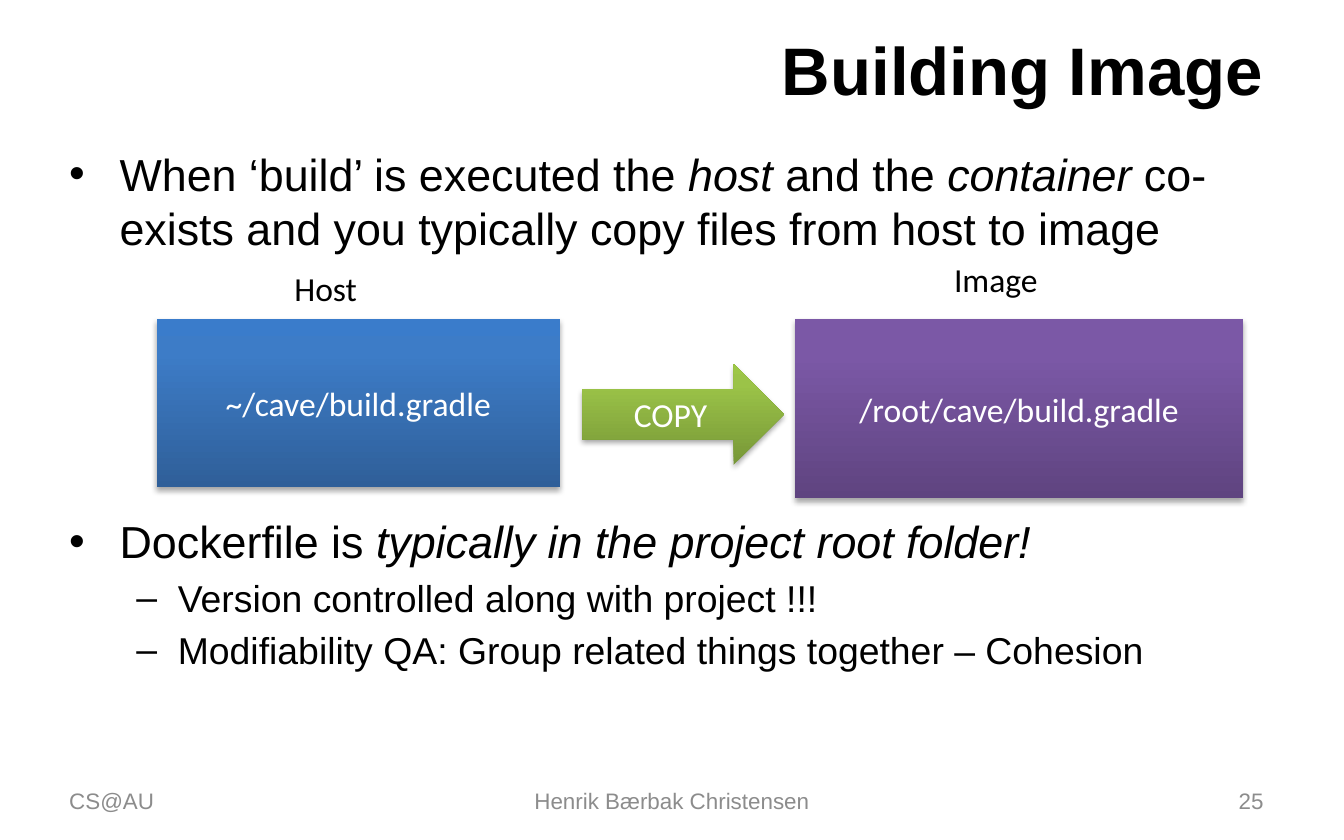
from lxml import etree
from pptx import Presentation, util as u
from pptx.dml.color import RGBColor
from pptx.enum import shapes, text
from pptx.oxml import parse_xml
from pptx.oxml.ns import nsdecls, qn

PX = 7620  # 120 px to the inch
LEFT, CENTER, RIGHT = text.PP_ALIGN.LEFT, text.PP_ALIGN.CENTER, text.PP_ALIGN.RIGHT
TOP, MIDDLE = text.MSO_ANCHOR.TOP, text.MSO_ANCHOR.MIDDLE
RECT, ARROW = shapes.MSO_SHAPE.RECTANGLE, shapes.MSO_SHAPE.RIGHT_ARROW

# text, box, size, font, colour, alignment, anchor, bold
LABELS = [
    ("Building Image", (60, 22, 1080, 78), 36, "Arial", "000000", RIGHT, MIDDLE, True),
    ("CS@AU", (50, 695, 280, 40), 12, "Arial", "8C8C8C", LEFT, MIDDLE, False),
    ("Henrik Bærbak Christensen", (410, 695, 380, 40), 12, "Arial", "8C8C8C", CENTER, MIDDLE, False),
    ("25", (860, 695, 280, 40), 12, "Arial", "8C8C8C", RIGHT, MIDDLE, False),
    ("Host", (251, 233, 220, 48), 18, "Calibri", "000000", LEFT, TOP, False),
    ("Image", (840, 225, 100, 48), 18, "Calibri", "000000", LEFT, TOP, False),
]
# box, then paragraphs of (level, [(text, italic)])
BULLETS = [
    ((50, 125, 1090, 110), [
        (0, [("When ‘build’ is executed the ", False), ("host ", True), ("and the ", False),
             ("container", True),
             (" co-exists and you typically copy files from host to image", False)]),
    ]),
    ((50, 453, 1090, 238), [
        (0, [("Dockerfile is ", False), ("typically in the project root folder!", True)]),
        (1, [("Version controlled along with project !!!", False)]),
        (1, [("Modifiability QA: Group related things together – Cohesion", False)]),
    ]),
]
# bullet, left margin px, hanging indent px, size
LEVELS = [("•", 45, 45, 24), ("–", 97, 37, 20)]
# preset, text, box, gradient from bottom to top
BLOCKS = [
    (RECT, "~/cave/build.gradle", (140, 285, 360, 150), ("2F5F99", "3D7CC7", "3A7CCB")),
    (RECT, "/root/cave/build.gradle", (710, 285, 400, 160), ("5F4480", "7B58A6", "7C57A8")),
    (ARROW, "COPY", (520, 325, 180, 90), ("779737", "9BC348", "9DC746")),
]
STOPS = (0, 80, 100)


def emu(box):
    return [v * PX for v in box]


def style(font, size, name, color, bold=False, italic=False):
    font.size, font.name, font.bold, font.italic = u.Pt(size), name, bold, italic
    font.color.rgb = RGBColor.from_string(color)


def text_box(s, box, anchor=TOP):
    tf = s.shapes.add_textbox(*emu(box)).text_frame
    tf.word_wrap, tf.vertical_anchor = True, anchor
    return tf


def add_label(s, label, box, size, name, color, align, anchor, bold):
    p = text_box(s, box, anchor).paragraphs[0]
    p.text, p.alignment = label, align
    style(p.runs[0].font, size, name, color, bold)


def add_bullets(s, box, items):
    tf = text_box(s, box)
    for i, (level, runs) in enumerate(items):
        p = tf.add_paragraph() if i else tf.paragraphs[0]
        bullet, margin, hang, size = LEVELS[level]
        pPr = p._p.get_or_add_pPr()
        pPr.set("marL", str(margin * PX))
        pPr.set("indent", str(-hang * PX))
        etree.SubElement(pPr, qn("a:buFont")).set("typeface", "Arial")
        etree.SubElement(pPr, qn("a:buChar")).set("char", bullet)
        p.level = level
        if i:
            p.space_before = u.Pt(size * 0.2)
        for words, italic in runs:
            r = p.add_run()
            r.text = words
            style(r.font, size, "Arial", "000000", italic=italic)


def add_block(s, preset, label, box, colors):
    """Preset shape with a vertical gradient and a soft shadow below it."""
    sp = s.shapes.add_shape(preset, *emu(box))
    sp.line.fill.background()
    stops = "".join(f'<a:gs pos="{pos * 1000}"><a:srgbClr val="{c}"/></a:gs>'
                    for pos, c in zip(STOPS, colors))
    spPr = sp._element.spPr
    spPr.find(qn("a:ln")).addprevious(parse_xml(
        f'<a:gradFill {nsdecls("a")} rotWithShape="1"><a:gsLst>{stops}</a:gsLst>'
        '<a:lin ang="16200000" scaled="0"/></a:gradFill>'))
    spPr.append(parse_xml(
        f'<a:effectLst {nsdecls("a")}><a:outerShdw blurRad="{u.Pt(3.1)}" dist="{u.Pt(1.8)}" '
        'dir="5400000" rotWithShape="0"><a:srgbClr val="000000"><a:alpha val="35000"/>'
        '</a:srgbClr></a:outerShdw></a:effectLst>'))
    tf = sp.text_frame
    tf.word_wrap, tf.vertical_anchor = True, MIDDLE
    p = tf.paragraphs[0]
    p.text, p.alignment = label, CENTER
    style(p.runs[0].font, 18, "Calibri", "FFFFFF")


def main():
    prs = Presentation()
    prs.slide_width, prs.slide_height = emu((1200, 750))
    s = prs.slides.add_slide(prs.slide_layouts[6])
    for box, items in BULLETS:
        add_bullets(s, box, items)
    for block in BLOCKS:
        add_block(s, *block)
    for label in LABELS:
        add_label(s, *label)
    prs.save("out.pptx")


if __name__ == "__main__":
    main()
